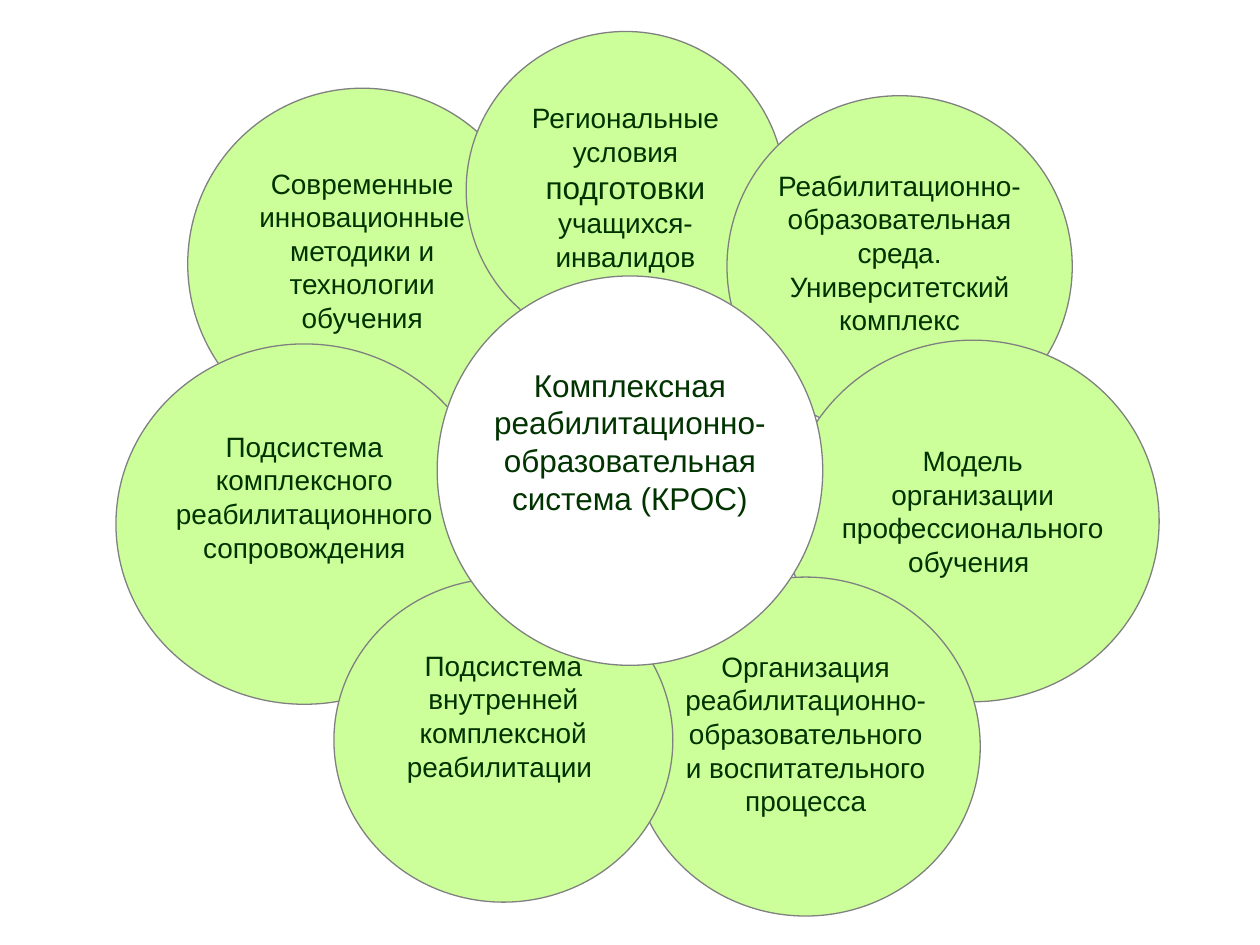
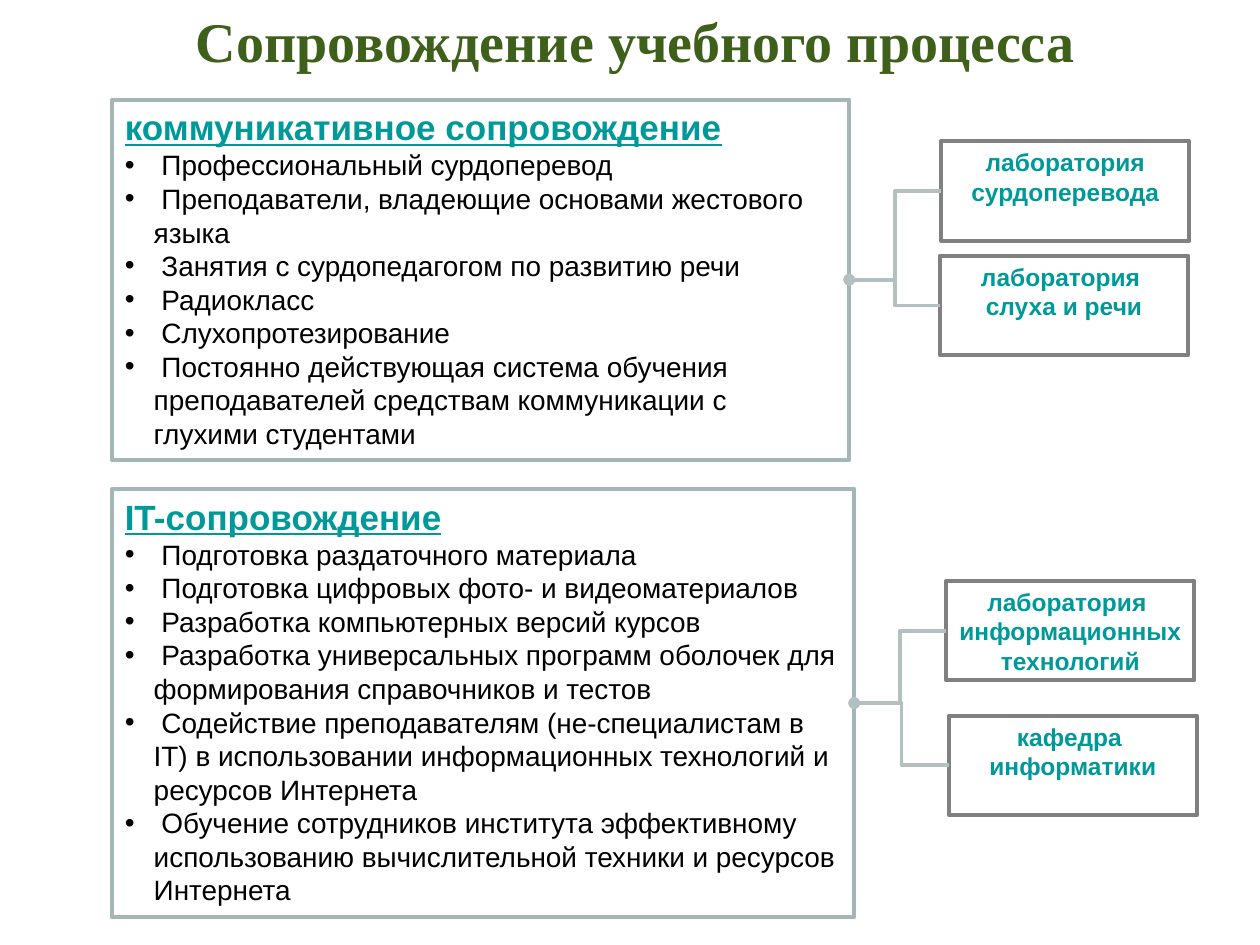
"""Builds two slides on a rehabilitation and education system and its support."""
from lxml.etree import SubElement
from pptx import Presentation
from pptx.dml.color import RGBColor
from pptx.enum.shapes import MSO_CONNECTOR as LINK, MSO_SHAPE as SHAPE
from pptx.enum.text import MSO_ANCHOR as ANCHOR, MSO_AUTO_SIZE as FIT, PP_ALIGN as ALIGN
from pptx.oxml.ns import qn
from pptx.util import Inches, Pt

WHITE = RGBColor(0xFF, 0xFF, 0xFF)
BLACK = RGBColor(0, 0, 0)
LIME = RGBColor(0xCC, 0xFF, 0x99)
FOREST = RGBColor(0x00, 0x33, 0x00)
OLIVE = RGBColor(0x3F, 0x60, 0x1A)
TEAL = RGBColor(0x00, 0x99, 0x99)
GRAY = RGBColor(0x80, 0x80, 0x80)
STEEL = RGBColor(0xA5, 0xB6, 0xB9)
MIST = RGBColor(0xB3, 0xC0, 0xC1)


def write(para, text, size, color, bold=False, font="Arial"):
    run = para.add_run()
    run.text = text
    run.font.name, run.font.size, run.font.bold = font, Pt(size), bold
    run.font.color.rgb = color
    return run


def draw(shapes, kind, spot, fill, width):
    shape = shapes.add_shape(kind, *map(Inches, spot))
    shape.shadow.inherit = False
    shape.fill.solid()
    shape.fill.fore_color.rgb = fill
    shape.line.color.rgb = GRAY
    shape.line.width = Pt(width)
    shape.text_frame.vertical_anchor = ANCHOR.TOP
    return shape


deck = Presentation()
deck.slide_width, deck.slide_height = Inches(10), Inches(7.5)

# Each circle: place, top inset, fill, paragraphs of (text, size) runs
circles = [
    ((1.49, 0.7, 2.77, 2.79), 0.21, LIME,
     [[("Современные инновационные методики и технологии обучения", 16)]]),
    ((3.7, 0.25, 2.53, 2.52), 0.18, LIME,
     [[("Региональные условия ", 16), ("подготовки", 18), (" учащихся-инвалидов", 16)]]),
    ((5.77, 0.76, 2.74, 2.71), 0.18, LIME,
     [[("Реабилитационно-образовательная среда.", 16)], [("Университетский комплекс", 16)]]),
    ((6.24, 2.7, 2.96, 2.87), 0.4, LIME,
     [[("Модель организации профессионального обучения ", 16)]]),
    ((5.01, 4.58, 2.77, 2.69), 0.18, LIME,
     [[("Организация реабилитационно-образовательного и воспитательного процесса", 16)]]),
    ((0.92, 2.73, 2.99, 2.86), 0.26, LIME,
     [[("Подсистема комплексного реабилитационного сопровождения", 16)]]),
    ((2.65, 4.59, 2.69, 2.57), 0.18, LIME,
     [[("Подсистема внутренней комплексной реабилитации ", 16)]]),
    ((3.47, 2.19, 3.06, 3.09), 0.26, WHITE,
     [[("Комплексная реабилитационно- образовательная система (КРОС)", 18)]]),
]
slide = deck.slides.add_slide(deck.slide_layouts[6])
flower = slide.shapes.add_group_shape()
for spot, inset, fill, paras in circles:
    frame = draw(flower.shapes, SHAPE.OVAL, spot, fill, 0.75).text_frame
    frame.word_wrap = True
    frame.margin_left = frame.margin_right = frame.margin_bottom = 0
    frame.margin_top = Inches(inset)
    for i, runs in enumerate(paras):
        para = frame.add_paragraph() if i else frame.paragraphs[0]
        para.alignment = ALIGN.CENTER
        for text, size in runs:
            write(para, text, size, FOREST)

slide = deck.slides.add_slide(deck.slide_layouts[3])
title = slide.shapes.title
title.left, title.top, title.width, title.height = map(Inches, (0.92, 0, 8.25, 0.63))
title.text_frame.auto_size = FIT.NONE
title.text_frame.vertical_anchor = ANCHOR.TOP
para = title.text_frame.paragraphs[0]
para.alignment = ALIGN.CENTER
write(para, "Сопровождение учебного процесса", 32, OLIVE, True, "Times New Roman")

# Each block: place, heading, list items, labs as (left, top, lines)
blocks = [
    ((0.89, 0.79, 5.85, 2.86), "коммуникативное сопровождение", [
        "Профессиональный сурдоперевод",
        "Преподаватели, владеющие основами жестового языка",
        "Занятия с сурдопедагогом по развитию речи",
        "Радиокласс",
        "Слухопротезирование",
        "Постоянно действующая система обучения преподавателей средствам "
        "коммуникации с глухими студентами",
    ], [
        (7.47, 1.12, ["лаборатория", "сурдоперевода"]),
        (7.46, 2.03, ["лаборатория ", "слуха и речи"]),
    ]),
    ((0.89, 3.88, 5.89, 3.4), "IT-сопровождение", [
        "Подготовка раздаточного материала",
        "Подготовка цифровых фото- и видеоматериалов",
        "Разработка компьютерных версий курсов",
        "Разработка универсальных программ оболочек для формирования справочников и тестов",
        "Содействие преподавателям (не-специалистам в IT) в использовании "
        "информационных технологий и ресурсов Интернета",
        "Обучение сотрудников института эффективному использованию "
        "вычислительной техники и ресурсов Интернета",
    ], [
        (7.51, 4.61, ["лаборатория ", "информационных", "технологий"]),
        (7.53, 5.68, ["кафедра ", "информатики"]),
    ]),
]
for idx, (spot, head, items, labs) in enumerate(blocks, 1):
    box = slide.placeholders[idx]
    box.left, box.top, box.width, box.height = map(Inches, spot)
    box.line.color.rgb = STEEL
    box.line.width = Pt(2.25)
    frame = box.text_frame
    frame.auto_size = FIT.NONE
    frame.vertical_anchor = ANCHOR.TOP
    for i, text in enumerate([head] + items):
        para = frame.add_paragraph() if i else frame.paragraphs[0]
        para.space_before = Pt(0)
        props = para._p.get_or_add_pPr()
        hang = Inches(0.23) if i else 0
        props.set("marL", str(hang))
        props.set("indent", str(-hang))
        if i:
            write(para, " " + text, 16, BLACK)
        else:
            SubElement(props, qn("a:buNone"))
            write(para, text, 20, TEAL, True).font.underline = True

    for left, top, lines in labs:
        lab = draw(slide.shapes, SHAPE.RECTANGLE, (left, top, 1.97, 0.79), WHITE, 2.25)
        lab.text_frame.word_wrap = False
        para = lab.text_frame.paragraphs[0]
        para.alignment = ALIGN.CENTER
        for i, text in enumerate(lines):
            if i:
                para.add_line_break()
            write(para, text, 14, TEAL, True)
        link = slide.shapes.add_connector(LINK.ELBOW, 0, 0, 0, 0)
        link.begin_connect(lab, 1)
        link.end_connect(box, 3)
        link.line.color.rgb = MIST
        link.line.width = Pt(2.25)
        SubElement(link.line._get_or_add_ln(), qn("a:tailEnd"), type="oval")
        SubElement(link._element.spPr, qn("a:effectLst"))

deck.save("out.pptx")
